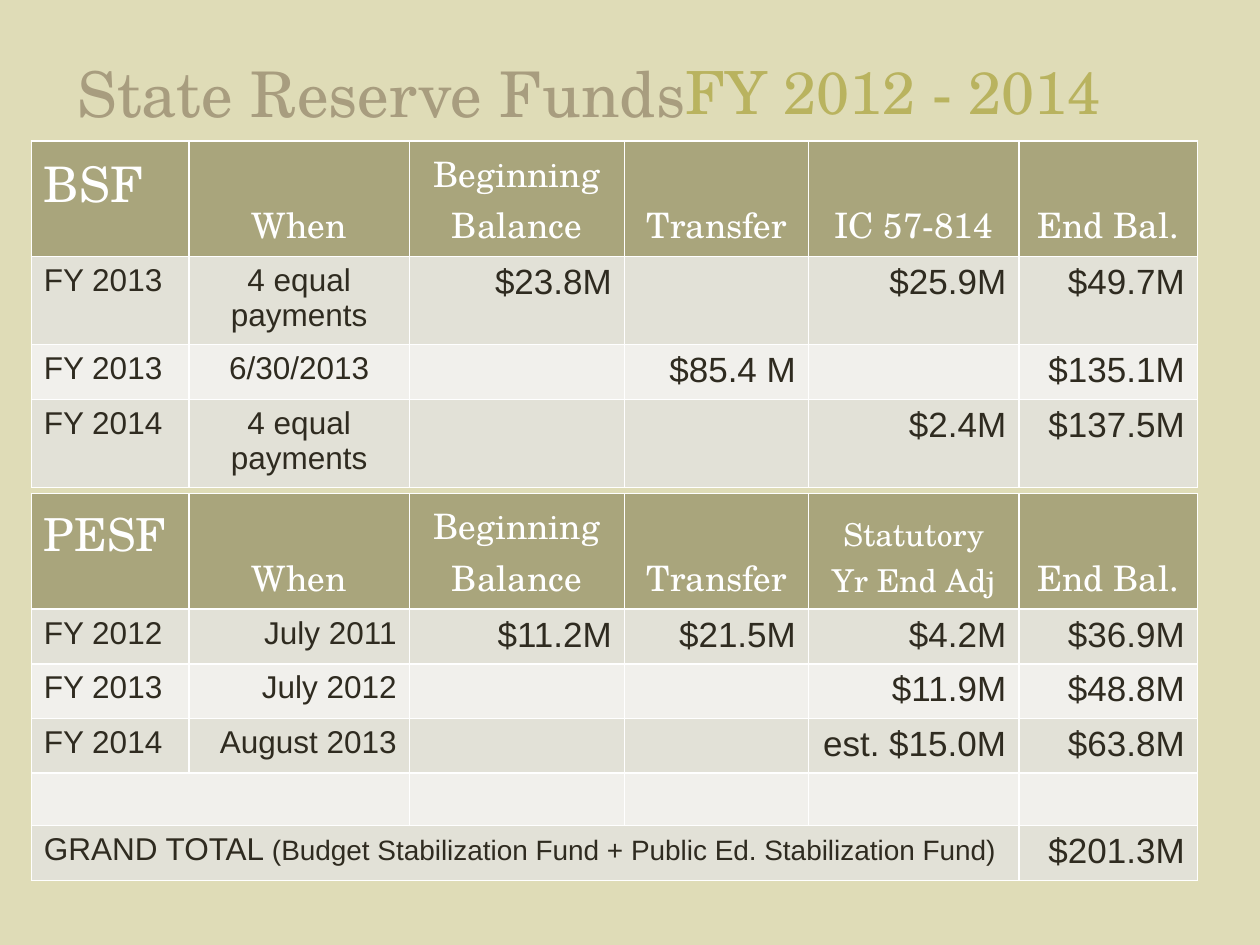
import pptx
import pptx.util
import pptx.dml.color
import pptx.enum.text
import pptx.oxml
import pptx.oxml.ns

Cm, Pt = pptx.util.Cm, pptx.util.Pt
RGBColor = pptx.dml.color.RGBColor
ALIGN = pptx.enum.text.PP_ALIGN
ANCHOR = pptx.enum.text.MSO_ANCHOR

SAND = RGBColor(0xDF, 0xDC, 0xB7)
TAN = RGBColor(0xA8, 0x9D, 0x7F)
OLIVE = RGBColor(0xB9, 0xB3, 0x5F)
HEADER = RGBColor(0xA9, 0xA5, 0x7C)
BAND_DARK = RGBColor(0xE2, 0xE1, 0xD7)
BAND_LIGHT = RGBColor(0xF1, 0xF0, 0xEC)
INK = RGBColor(0x2F, 0x2B, 0x20)
WHITE = RGBColor(0xFF, 0xFF, 0xFF)
SERIF, SANS = "TeX Gyre Schola", "Arial"


def add_run(p, text, size, name, color):
    r = p.add_run()
    r.text = text
    for key, value in {"size": Pt(size), "name": name, "bold": False}.items():
        setattr(r.font, key, value)
    r.font.color.rgb = color


def style_cell(cell, fill):
    cell.fill.solid()
    cell.fill.fore_color.rgb = fill
    tcPr = cell._tc.get_or_add_tcPr()
    for i, side in enumerate(("lnL", "lnR", "lnT", "lnB")):
        tcPr.insert(i, pptx.oxml.parse_xml(
            f'<a:{side} {pptx.oxml.ns.nsdecls("a")} w="{Pt(1)}"><a:solidFill>'
            f'<a:srgbClr val="{WHITE}"/></a:solidFill></a:{side}>'))


prs = pptx.Presentation()
prs.slide_width, prs.slide_height = Cm(25.4), Cm(19.05)
s = prs.slides.add_slide(prs.slide_layouts[6])
s.background.fill.solid()
s.background.fill.fore_color.rgb = SAND

# Two-part title
titles = [
    ("State Reserve Funds", 36, TAN, ALIGN.LEFT, (1.32, 0.97, 15.67, 1.8), 0.25),
    ("FY 2012 - 2014", 34, OLIVE, ALIGN.CENTER, (12.7, 0.97, 9.96, 1.7), 0.91),
]
for text, size, color, align, box, margin in titles:
    sp = s.shapes.add_textbox(*map(Cm, box))
    tf = sp.text_frame
    for key, value in {"word_wrap": True, "vertical_anchor": ANCHOR.MIDDLE,
                       "margin_left": Cm(margin)}.items():
        setattr(tf, key, value)
    p = tf.paragraphs[0]
    p.alignment = align
    add_run(p, text, size, SERIF, color)

# Fund tables: top, size of the fund name, alignment of dates, row heights, rows
col_widths = [3.18, 4.44, 4.34, 3.71, 4.24, 3.6]
funds = [
    (2.84, 28, ALIGN.CENTER, [2.33, 1.73, 1.06, 1.73], [
        ["BSF", "When", "Beginning Balance", "Transfer", "IC 57-814", "End Bal."],
        ["FY 2013", "4 equal payments", "$23.8M", "", "$25.9M", "$49.7M"],
        ["FY 2013", "6/30/2013", "", "$85.4 M", "", "$135.1M"],
        ["FY 2014", "4 equal payments", "", "", "$2.4M", "$137.5M"],
    ]),
    (9.95, 26, ALIGN.RIGHT, [2.33] + [1.06] * 5, [
        ["PESF", "When", "Beginning Balance", "Transfer",
         "Statutory\nYr End Adj", "End Bal."],
        ["FY 2012", "July 2011", "$11.2M", "$21.5M", "$4.2M", "$36.9M"],
        ["FY 2013", "July 2012", "", "", "$11.9M", "$48.8M"],
        ["FY 2014", "August 2013", "", "", "est. $15.0M", "$63.8M"],
        [""] * 6,
        ["GRAND TOTAL ", "", "", "", "", "$201.3M"],
    ]),
]
for top, name_size, date_align, heights, rows in funds:
    tbl = s.shapes.add_table(len(rows), len(col_widths), Cm(0.63), Cm(top),
                             Cm(sum(col_widths)), Cm(sum(heights))).table
    tbl.first_row = tbl.horz_banding = False
    for col, width in zip(tbl.columns, col_widths):
        col.width = Cm(width)
    for row, height in zip(tbl.rows, heights):
        row.height = Cm(height)

    for i, row in enumerate(rows):
        for j, text in enumerate(row):
            cell = tbl.cell(i, j)
            style_cell(cell, HEADER if i == 0 else BAND_DARK if i % 2 else BAND_LIGHT)
            if i == 0:
                size = name_size if j == 0 else 18 if "\n" in text else 20
                align = ALIGN.CENTER
                name, color = SERIF, WHITE
                cell.vertical_anchor = ANCHOR.BOTTOM if j else ANCHOR.TOP
            else:
                size = 18 if j < 2 else 20
                align = date_align if j == 1 else ALIGN.RIGHT
                name, color = SANS, INK
            if not text:
                continue
            tf = cell.text_frame
            for k, line in enumerate(text.split("\n")):
                p = tf.add_paragraph() if k else tf.paragraphs[0]
                p.alignment = align if j else ALIGN.LEFT
                add_run(p, line, size, name, color)

# Grand total row and the spacer above it, in the last table
add_run(tbl.cell(5, 0).text_frame.paragraphs[0],
        "(Budget Stabilization Fund + Public Ed. Stabilization Fund)", 16, SANS, INK)
tbl.cell(4, 0).merge(tbl.cell(4, 1))
tbl.cell(5, 0).merge(tbl.cell(5, 4))

prs.save("out.pptx")
